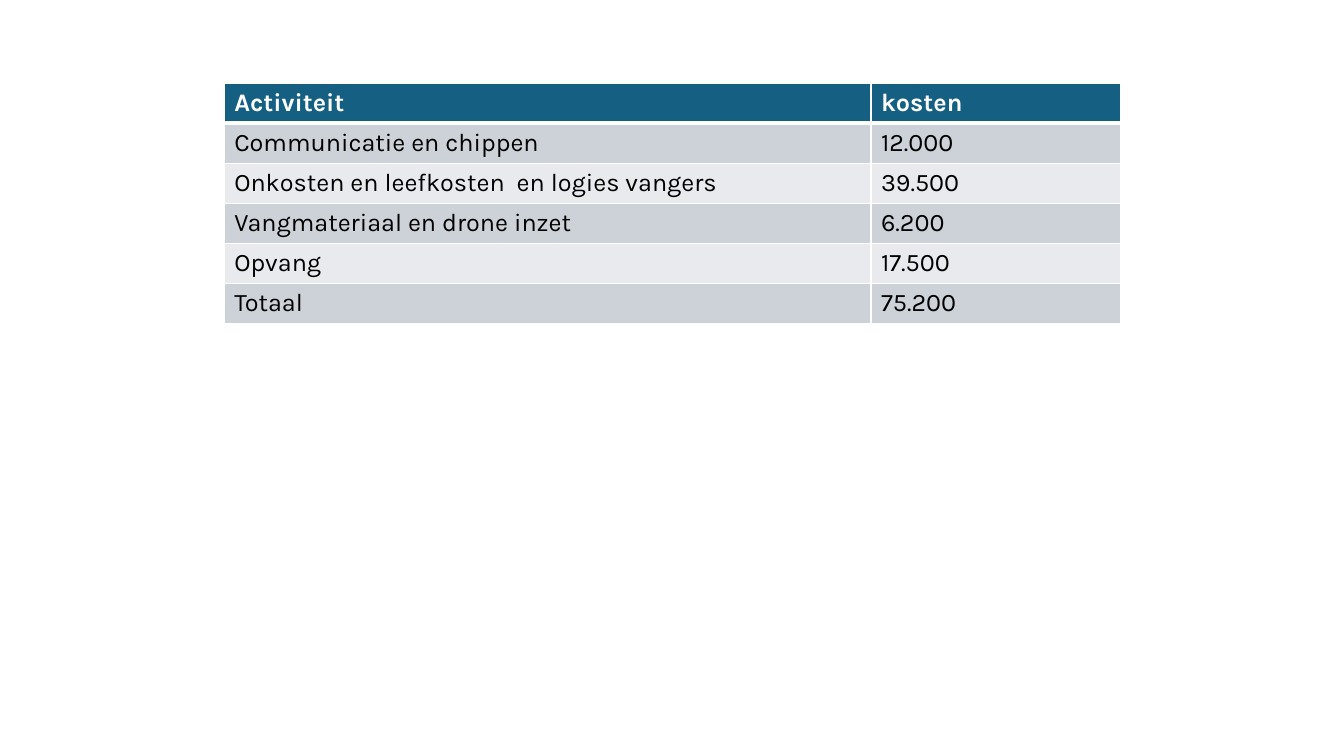
from lxml.etree import SubElement
from pptx import Presentation
from pptx.dml.color import RGBColor
from pptx.oxml.ns import qn
from pptx.util import Cm, Pt

WHITE = RGBColor(0xFF, 0xFF, 0xFF)
BLACK = RGBColor(0x00, 0x00, 0x00)
HEADER_BLUE = RGBColor(0x15, 0x60, 0x82)
BAND_DARK = RGBColor(0xCC, 0xD2, 0xD8)
BAND_LIGHT = RGBColor(0xE8, 0xEA, 0xED)

COSTS = [
    ("Activiteit", "kosten"),
    ("Communicatie en chippen", "12.000"),
    ("Onkosten en leefkosten  en logies vangers", "39.500"),
    ("Vangmateriaal en drone inzet", "6.200"),
    ("Opvang", "17.500"),
    ("Totaal", "75.200"),
]


class SlideBuilder:
    font_name = "Karla"
    font_size = Pt(18)
    border_color = WHITE

    def __init__(self, page):
        self.page = page

    def border(self, cell, side, width):
        line = SubElement(cell._tc.get_or_add_tcPr(), qn(f"a:ln{side}"), w=str(width))
        fill = SubElement(line, qn("a:solidFill"))
        SubElement(fill, qn("a:srgbClr"), val=str(self.border_color))

    def cell(self, cell, text, is_header, fill_color):
        for side in "LRTB":
            thick = is_header and side == "B"
            self.border(cell, side, Pt(3 if thick else 1))
        cell.fill.solid()
        cell.fill.fore_color.rgb = fill_color
        span = cell.text_frame.paragraphs[0].add_run()
        span.text = text
        span.font.name = self.font_name
        span.font.size = self.font_size
        span.font.bold = is_header
        span.font.color.rgb = WHITE if is_header else BLACK

    def table(self, rows, left, top, column_widths, row_height):
        frame = self.page.shapes.add_table(
            len(rows), len(column_widths), left, top,
            sum(column_widths), row_height * len(rows))
        table = frame.table
        for column, width in zip(table.columns, column_widths):
            column.width = width
        for row_index, texts in enumerate(rows):
            is_header = row_index == 0
            band = BAND_DARK if row_index % 2 else BAND_LIGHT
            for column_index, text in enumerate(texts):
                self.cell(table.cell(row_index, column_index), text,
                          is_header, HEADER_BLUE if is_header else band)


def main():
    deck = Presentation()
    deck.slide_width, deck.slide_height = Cm(33.87), Cm(19.05)
    blank_layout = deck.slide_layouts[6]
    builder = SlideBuilder(deck.slides.add_slide(blank_layout))
    builder.table(COSTS, Cm(5.65), Cm(2.09), [Cm(16.3), Cm(6.28)], Cm(1.01))
    deck.save("out.pptx")


if __name__ == "__main__":
    main()
